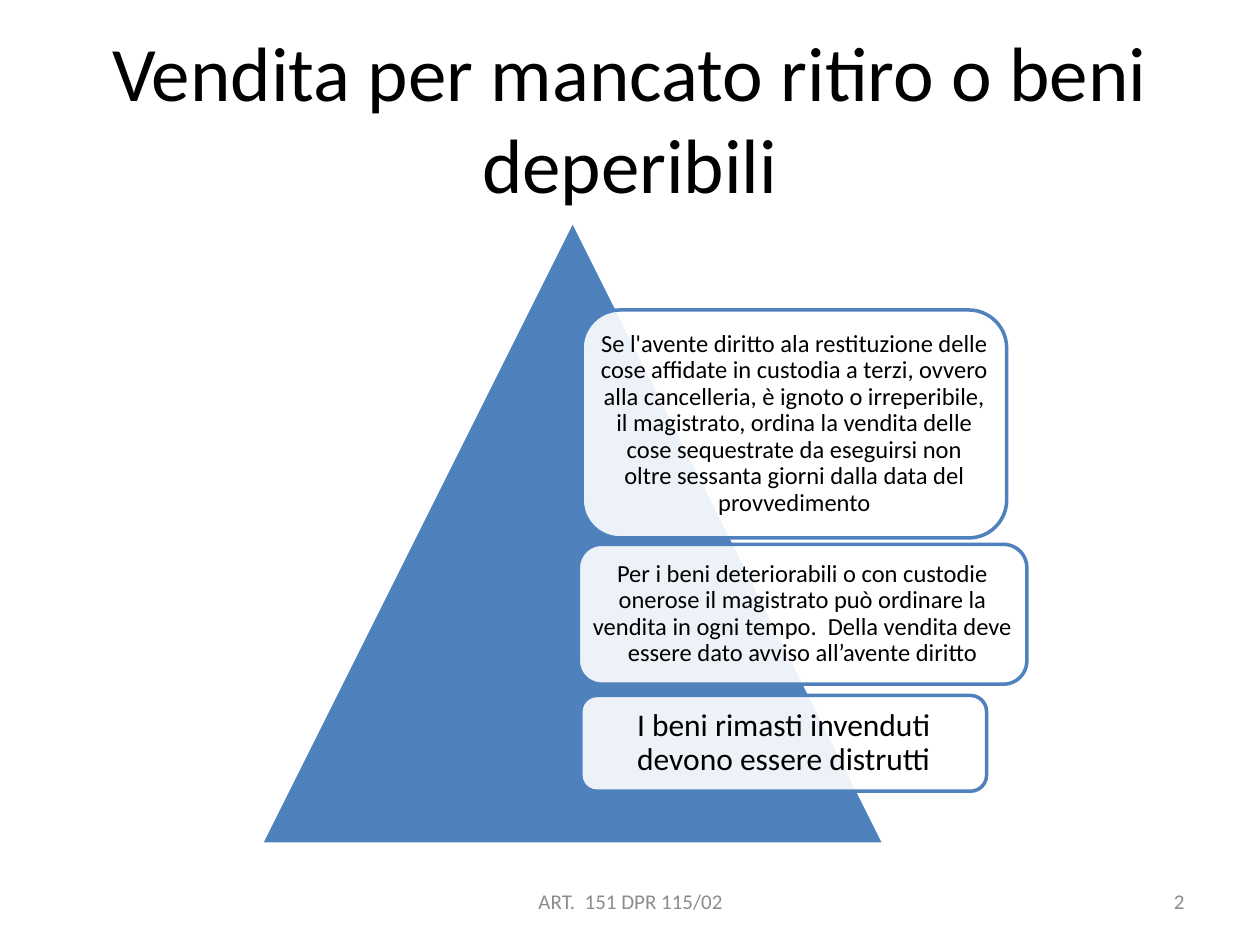
from dataclasses import dataclass
from pptx import Presentation
from pptx.dml.color import RGBColor as Rgb
from pptx.enum.shapes import MSO_SHAPE as Kind
from pptx.enum.text import MSO_ANCHOR as Anchor, PP_ALIGN as Align
from pptx.oxml.ns import qn
from pptx.util import Inches, Pt
from lxml.etree import SubElement as Sub

WIDE, HIGH = Inches(10), Inches(7.5)
HUES = {"blue": "4F81BD", "white": "FFFFFF", "black": "000000", "gray": "8C8C8C"}


@dataclass(frozen=True)
class Area:
    left: float
    top: float
    width: float
    height: float

    def spans(self) -> tuple[int, ...]:
        sides = (WIDE, HIGH, WIDE, HIGH)
        shares = (self.left, self.top, self.width, self.height)
        return tuple(round(side * share / 100) for side, share in zip(sides, shares))


@dataclass(frozen=True)
class Card:
    area: Area
    text: str
    size: int = 14
    inset: float = 0.06


@dataclass(frozen=True)
class Label:
    area: Area
    text: str
    size: int = 12
    hue: str = "gray"
    align: Align = Align.CENTER


CARDS = [
    Card(Area(46.2, 32.8, 33.7, 24.13),
         "Se l'avente diritto ala restituzione delle cose affidate in custodia a terzi, "
         "ovvero alla cancelleria, è ignoto o irreperibile, il magistrato, ordina la vendita "
         "delle cose sequestrate da eseguirsi non oltre sessanta giorni dalla data del provvedimento"),
    Card(Area(45.9, 57.6, 35.6, 14.8),
         "Per i beni deteriorabili o con custodie onerose il magistrato può ordinare la vendita "
         "in ogni tempo.  Della vendita deve essere dato avviso all’avente diritto"),
    Card(Area(46.1, 73.6, 32.2, 10.13),
         "I beni rimasti invenduti devono essere distrutti", 18, 0.07),
]
LABELS = [
    Label(Area(5, 4, 90, 16.67), "Vendita per mancato ritiro o beni deperibili", 44, "black"),
    Label(Area(34.2, 92.67, 31.7, 5.33), "ART.  151 DPR 115/02"),
    Label(Area(71.7, 92.67, 23.3, 5.33), "2", align=Align.RIGHT),
]


def tint(hue: str) -> Rgb:
    return Rgb.from_string(HUES[hue])


def write(shape, text: str, *, size: int, hue: str = "black", align: Align = Align.CENTER,
          space: float = 1, inset: float | None = None) -> None:
    frame = shape.text_frame
    frame.word_wrap = True
    frame.vertical_anchor = Anchor.MIDDLE
    if inset is not None:
        frame.margin_left = frame.margin_right = Inches(inset)
        frame.margin_top = frame.margin_bottom = Inches(inset)
    para = frame.paragraphs[0]
    para.alignment = align
    para.line_spacing = space
    run = para.add_run()
    run.text = text
    run.font.name = "Calibri"
    run.font.size = Pt(size)
    run.font.color.rgb = tint(hue)


def draw(slide, kind: Kind, area: Area, fill: str, line: str, alpha: int = 100):
    shape = slide.shapes.add_shape(kind, *area.spans())
    shape.shadow.inherit = False
    shape.fill.solid()
    shape.fill.fore_color.rgb = tint(fill)
    if alpha < 100:
        color = shape.fill._xPr.find(qn("a:solidFill"))[0]
        Sub(color, qn("a:alpha"), val=str(alpha * 1000))
    shape.line.color.rgb = tint(line)
    shape.line.width = Pt(2)
    return shape


def main() -> None:
    deck = Presentation()
    deck.slide_width, deck.slide_height = WIDE, HIGH
    slide = deck.slides.add_slide(deck.slide_layouts[6])
    draw(slide, Kind.ISOSCELES_TRIANGLE, Area(20.7, 23.33, 49.5, 66), "blue", "white")
    for card in CARDS:
        shape = draw(slide, Kind.ROUNDED_RECTANGLE, card.area, "white", "blue", 90)
        write(shape, card.text, size=card.size, space=0.9, inset=card.inset)
    for label in LABELS:
        box = slide.shapes.add_textbox(*label.area.spans())
        write(box, label.text, size=label.size, hue=label.hue, align=label.align)
    deck.save("out.pptx")


if __name__ == "__main__":
    main()
